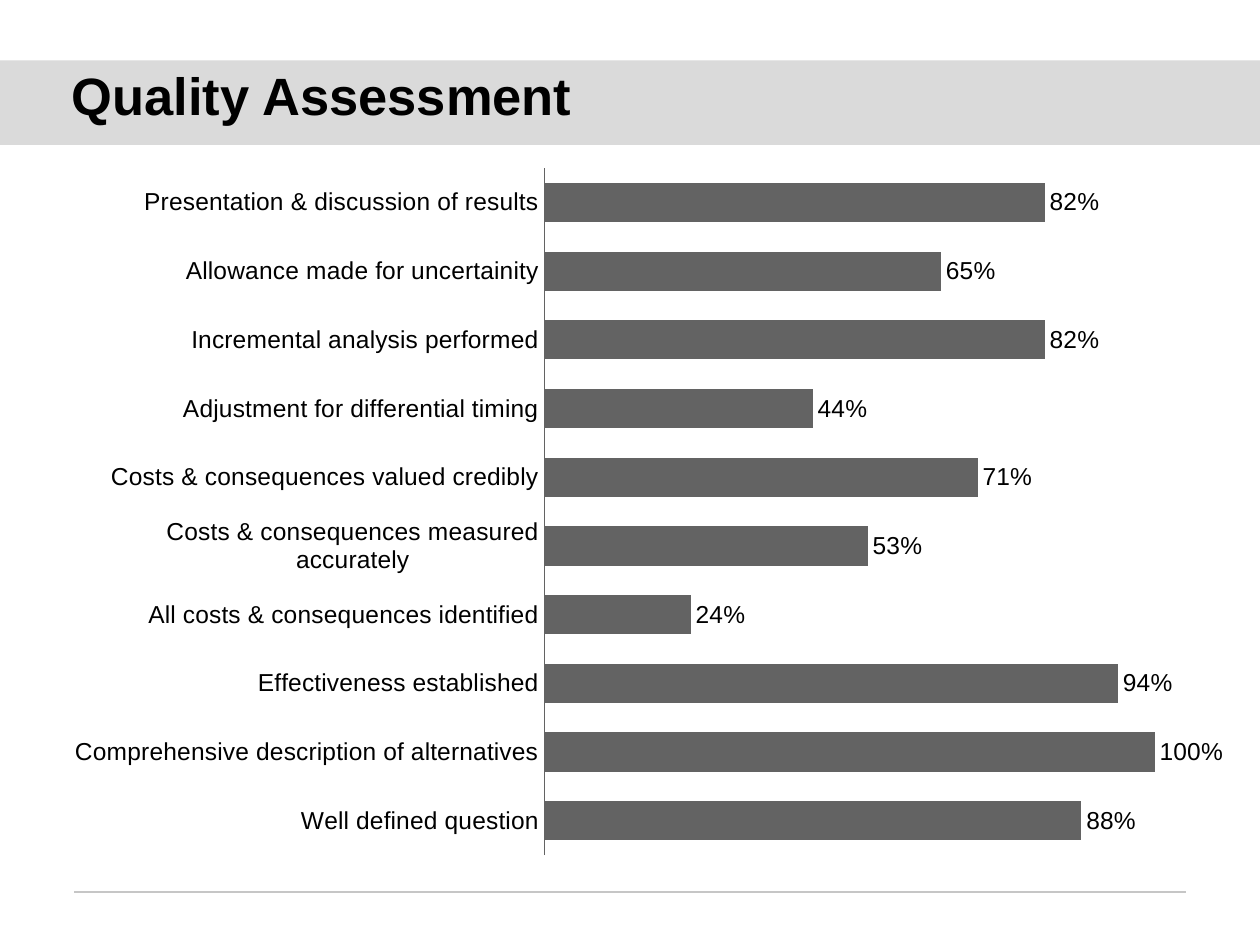
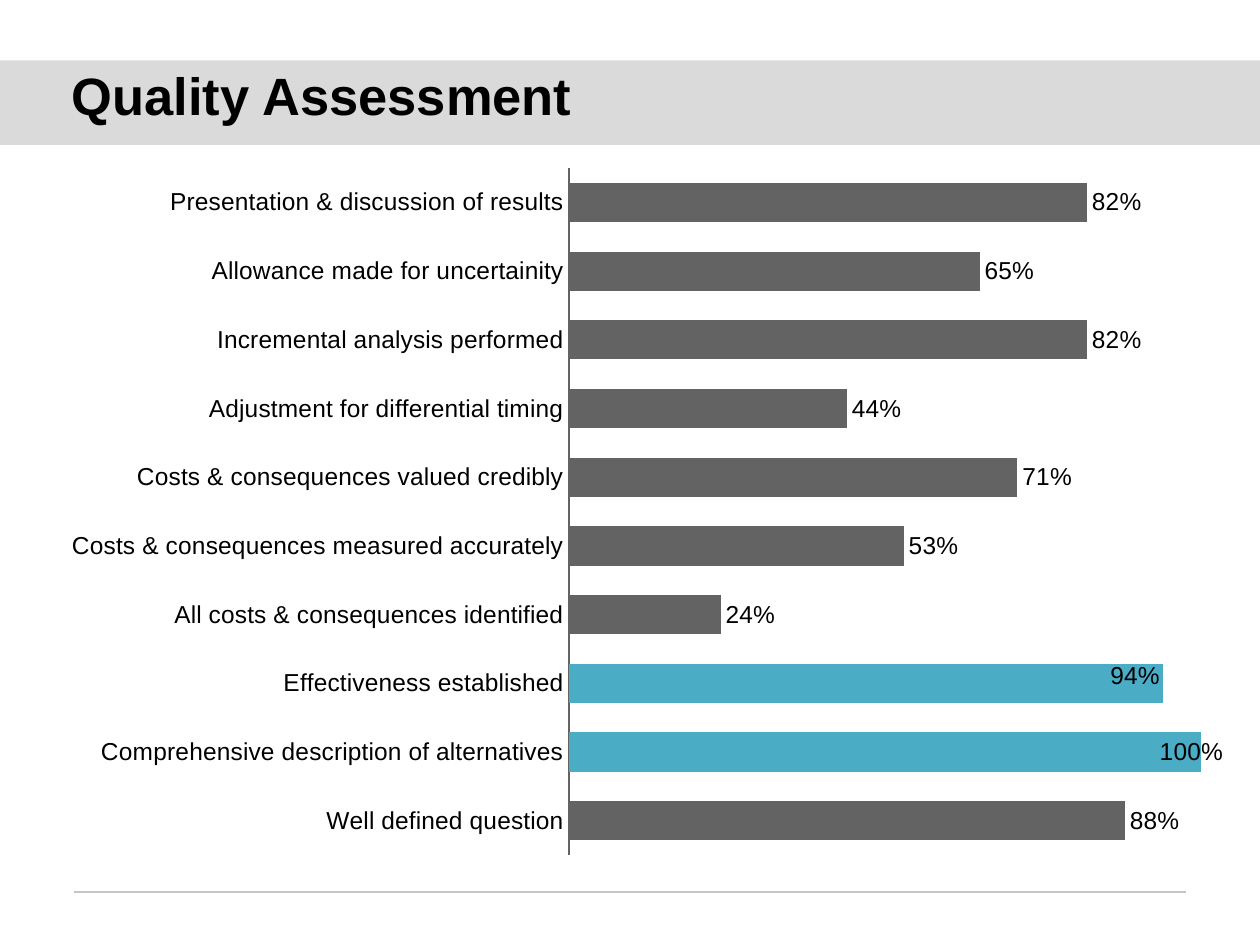
from lxml import etree
from pptx import Presentation
from pptx.chart.data import CategoryChartData
from pptx.dml.color import RGBColor
from pptx.enum.chart import XL_CHART_TYPE, XL_LABEL_POSITION, XL_TICK_MARK
from pptx.enum.shapes import MSO_CONNECTOR, MSO_SHAPE
from pptx.enum.text import MSO_ANCHOR, PP_ALIGN
from pptx.oxml import parse_xml
from pptx.oxml.ns import nsdecls, qn
from pptx.util import Cm, Pt

BAR_CLUSTERED = XL_CHART_TYPE.BAR_CLUSTERED
OUTSIDE_END = XL_LABEL_POSITION.OUTSIDE_END
NO_TICKS = XL_TICK_MARK.NONE
RECTANGLE = MSO_SHAPE.RECTANGLE
STRAIGHT = MSO_CONNECTOR.STRAIGHT
MIDDLE = MSO_ANCHOR.MIDDLE
LEFT = PP_ALIGN.LEFT

BLACK = RGBColor(0x00, 0x00, 0x00)
BAND_GREY = RGBColor(0xDA, 0xDA, 0xDA)
RULE_GREY = RGBColor(0xC6, 0xC6, 0xC6)
BAR_GREY = RGBColor(0x63, 0x63, 0x63)
HIGHLIGHT_TEAL = RGBColor(0x4B, 0xAC, 0xC6)
FONT = "Arial"
PERCENT = "0%"
TITLE_ONLY = 5

QUALITY_SCORES = {
    "Well defined question": 0.88,
    "Comprehensive description of alternatives": 1,
    "Effectiveness established": 0.94,
    "All costs & consequences identified": 0.24,
    "Costs & consequences measured accurately": 0.53,
    "Costs & consequences valued credibly": 0.71,
    "Adjustment for differential timing": 0.44,
    "Incremental analysis performed": 0.82,
    "Allowance made for uncertainity": 0.65,
    "Presentation & discussion of results": 0.82,
}
# Highlighted criterion -> shift of its label, as fractions of the chart
HIGHLIGHTS = {
    "Comprehensive description of alternatives": (-0.04, 0),
    "Effectiveness established": (-0.05, -0.01),
}


def manual_layout(**settings):
    layout = parse_xml(f"<c:layout {nsdecls('c')}><c:manualLayout/></c:layout>")
    for name, value in settings.items():
        etree.SubElement(layout[0], qn(f"c:{name}")).set("val", str(value))
    return layout


class Deck:
    def __init__(self):
        self.presentation = Presentation()
        self.presentation.slide_width = Cm(25.4)
        self.presentation.slide_height = Cm(19.05)
        self.slide = None

    def style(self, font, size, bold=False):
        font.name, font.size, font.bold = FONT, Pt(size), bold
        font.color.rgb = BLACK

    def add_slide(self, title):
        layout = self.presentation.slide_layouts[TITLE_ONLY]
        self.slide = self.presentation.slides.add_slide(layout)
        self.add_title(title)
        self.add_band()
        self.add_footer_rule()

    def add_title(self, text):
        title = self.slide.shapes.title
        title.left, title.top = Cm(1.45), Cm(1.42)
        title.width, title.height = Cm(22.45), Cm(1.14)
        frame = title.text_frame
        frame.margin_left = frame.margin_right = 0
        frame.margin_top = frame.margin_bottom = 0
        frame.vertical_anchor = MIDDLE
        frame.text = text
        paragraph = frame.paragraphs[0]
        paragraph.alignment = LEFT
        paragraph.line_spacing = 0.9
        self.style(paragraph.font, 30, bold=True)

    def add_band(self):
        """Add the grey band behind the title."""
        band = self.slide.shapes.add_shape(
            RECTANGLE, 0, Cm(1.22), self.presentation.slide_width, Cm(1.7))
        band.shadow.inherit = False
        band.fill.solid()
        band.fill.fore_color.rgb = BAND_GREY
        band.line.fill.background()
        self.slide.shapes.title.element.addprevious(band.element)

    def add_footer_rule(self):
        rule = self.slide.shapes.add_connector(
            STRAIGHT, Cm(1.5), Cm(17.98), Cm(23.9), Cm(17.98))
        rule.line.color.rgb = RULE_GREY
        rule.line.width = Pt(0.75)
        etree.SubElement(rule.element.spPr, qn("a:effectLst"))

    def add_bar_chart(self, scores, plot_left, plot_width, axis_width):
        """Add a percentage bar chart; plot sizes are fractions of its width."""
        data = CategoryChartData(number_format=PERCENT)
        data.categories = list(scores)
        data.add_series("Series 1", list(scores.values()))
        chart = self.slide.shapes.add_chart(
            BAR_CLUSTERED, Cm(1.45), Cm(3.1), Cm(23.22), Cm(14.43), data).chart
        chart.has_legend = False
        chart.has_title = False
        self.style(chart.font, 14)

        category_axis = chart.category_axis
        category_axis.major_tick_mark = category_axis.minor_tick_mark = NO_TICKS
        category_axis.format.line.color.rgb = BAR_GREY
        category_axis.format.line.width = Pt(axis_width)
        value_axis = chart.value_axis
        value_axis.minimum_scale, value_axis.maximum_scale = 0, 1
        value_axis.has_major_gridlines = False
        value_axis.visible = False

        plot = chart.plots[0]
        plot.gap_width = 75
        plot.vary_by_categories = False
        series = plot.series[0]
        series.format.fill.solid()
        series.format.fill.fore_color.rgb = BAR_GREY
        labels = series.data_labels
        labels.show_value = True
        labels.number_format = PERCENT
        labels.number_format_is_linked = False
        labels.position = OUTSIDE_END
        self.style(labels.font, 14)

        plot_area = chart.element.xpath("c:chart/c:plotArea")[0]
        for layout in plot_area.xpath("c:layout"):
            plot_area.remove(layout)
        plot_area.insert(0, manual_layout(
            layoutTarget="inner", xMode="edge", yMode="edge",
            x=plot_left, y=0.02, w=plot_width, h=0.96))
        return chart

    def highlight_bars(self, chart, shifts):
        series = chart.plots[0].series[0]
        categories = list(chart.plots[0].categories)
        for category, (shift_x, shift_y) in shifts.items():
            index = categories.index(category)
            point = series.points[index]
            point.format.fill.solid()
            point.format.fill.fore_color.rgb = HIGHLIGHT_TEAL
            self.style(point.data_label.font, 14)
            point.data_label.position = OUTSIDE_END
            label = chart.element.xpath(f"//c:dLbl[c:idx/@val='{index}']")[0]
            label.insert(1, manual_layout(x=shift_x, y=shift_y))
            label.insert(2, parse_xml(
                f'<c:numFmt {nsdecls("c")} formatCode="{PERCENT}" sourceLinked="0"/>'))


def main():
    deck = Deck()
    deck.add_slide("Quality Assessment")
    deck.add_bar_chart(QUALITY_SCORES, plot_left=0.41, plot_width=0.53, axis_width=0.75)

    deck.add_slide("Quality Assessment")
    chart = deck.add_bar_chart(
        QUALITY_SCORES, plot_left=0.43, plot_width=0.55, axis_width=1)
    deck.highlight_bars(chart, HIGHLIGHTS)
    deck.presentation.save("out.pptx")


if __name__ == "__main__":
    main()
